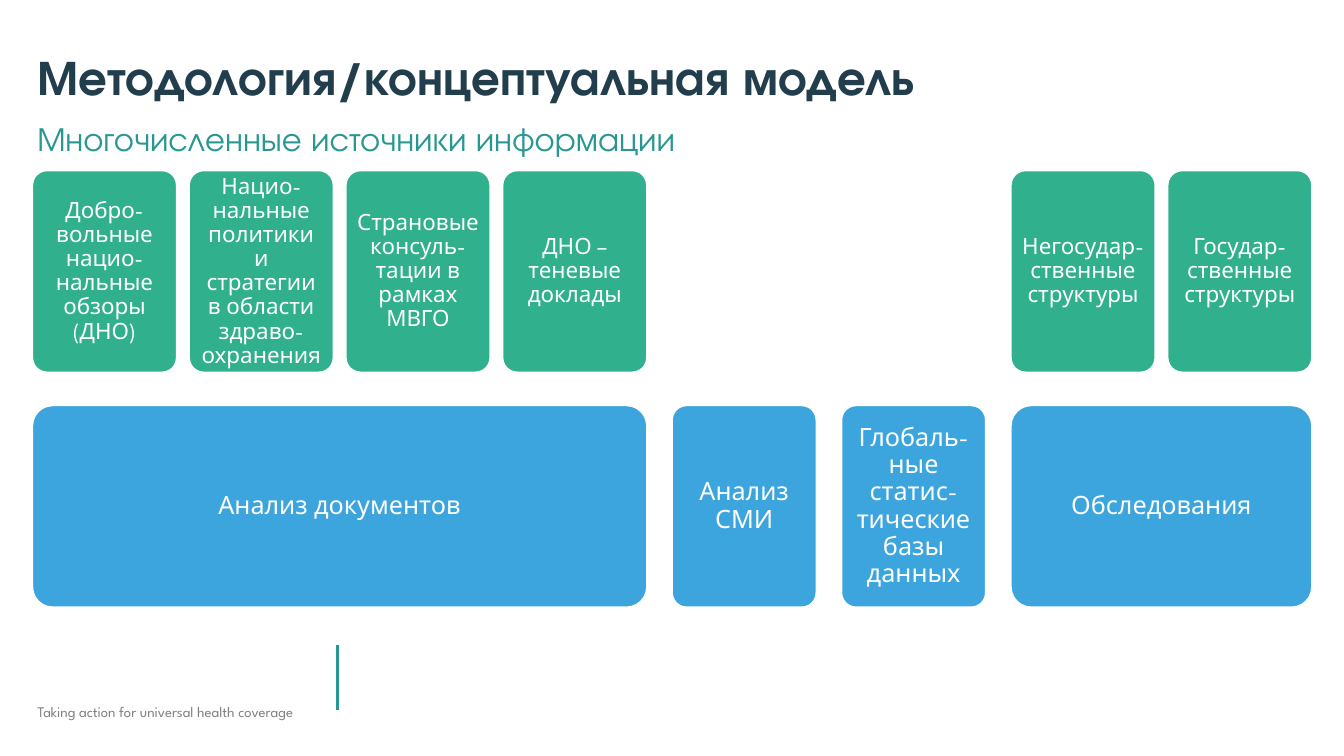
from dataclasses import dataclass

from lxml import etree
from pptx import Presentation
from pptx import util as u
from pptx.dml.color import RGBColor
from pptx.enum import shapes, text
from pptx.oxml.ns import qn


@dataclass(frozen=True)
class Theme:
    heading_font: str = "TeX Gyre Adventor"
    body_font: str = "League Spartan"
    navy: str = "223E4C"
    teal: str = "289791"
    grey: str = "808080"
    green: str = "30B08C"
    blue: str = "3CA5DD"
    white: str = "FFFFFF"
    title_size: float = 35
    subtitle_size: float = 24
    method_size: float = 18
    source_size: float = 16
    footer_size: float = 10.5


THEME = Theme()

# Each method of analysis with the sources that feed it
METHODS = [
    ("Анализ документов", [
        "Добро-вольные нацио-нальные обзоры (ДНО)",
        "Нацио-нальные политики и стратегии в области здраво-охранения",
        "Страновые консуль-тации в рамках МВГО",
        "ДНО – теневые доклады",
    ]),
    ("Анализ СМИ", []),
    ("Глобаль-ные статис-тические базы данных", []),
    ("Обследования", ["Негосудар-ственные структуры", "Государ-ственные структуры"]),
]

CARD_WIDTH, CARD_HEIGHT = 3.63, 5.08
CARD_GAP, METHOD_GAP, ROW_GAP = 0.32, 0.64, 0.84


def write(frame, words, font_name, size, color, bold=False):
    frame.word_wrap = True
    paragraph = frame.paragraphs[0]
    paragraph.line_spacing = 0.9
    run = paragraph.add_run()
    run.text = words
    run.font.name = font_name
    run.font.size = u.Pt(size)
    run.font.bold = bold
    run.font.color.rgb = RGBColor.from_string(color)
    return paragraph


def add_label(slide, box, words, *style, **options):
    """Place a text box; box is left, top, width, height in centimetres."""
    shape = slide.shapes.add_textbox(*map(u.Cm, box))
    return write(shape.text_frame, words, *style, **options)


def add_card(slide, box, words, color, size):
    left, top, width, height = box
    card = slide.shapes.add_shape(
        shapes.MSO_SHAPE.ROUNDED_RECTANGLE, *map(u.Cm, (left, top, width, height)))
    card.adjustments[0] = 0.1
    card.shadow.inherit = False
    card.fill.solid()
    card.fill.fore_color.rgb = RGBColor.from_string(color)
    card.line.color.rgb = RGBColor.from_string(THEME.white)
    card.line.width = u.Pt(1)
    frame = card.text_frame
    frame.margin_left = frame.margin_right = u.Cm(0.17)
    frame.margin_top = frame.margin_bottom = u.Cm(0.17)
    frame.vertical_anchor = text.MSO_ANCHOR.MIDDLE
    paragraph = write(frame, words, THEME.body_font, size, THEME.white)
    paragraph.alignment = text.PP_ALIGN.CENTER


def add_header(slide, left, top, width):
    add_label(slide, (left, top, width, 1.75), "Методология/концептуальная модель",
              THEME.heading_font, THEME.title_size, THEME.navy, bold=True)
    add_label(slide, (left, top + 1.75, width, 1.14), "Многочисленные источники информации",
              THEME.heading_font, THEME.subtitle_size, THEME.teal)


def add_method_map(slide, left, top):
    """Place source cards above the method card that spans them."""
    pitch = CARD_WIDTH + CARD_GAP
    method_top = top + CARD_HEIGHT + ROW_GAP
    for method, sources in METHODS:
        width = max(len(sources), 1) * pitch - CARD_GAP
        add_card(slide, (left, method_top, width, CARD_HEIGHT),
                 method, THEME.blue, THEME.method_size)
        for column, source in enumerate(sources):
            add_card(slide, (left + column * pitch, top, CARD_WIDTH, CARD_HEIGHT),
                     source, THEME.green, THEME.source_size)
        left += width + METHOD_GAP


def add_footer(slide, left, top, width):
    rule_x = u.Cm(left + 7.82)
    rule = slide.shapes.add_connector(
        shapes.MSO_CONNECTOR.STRAIGHT, rule_x, u.Cm(top - 1.32), rule_x, u.Cm(top + 0.3))
    rule.line.color.rgb = RGBColor.from_string(THEME.teal)
    rule.line.width = u.Pt(2.25)
    etree.SubElement(rule._element.spPr, qn("a:effectLst"))
    paragraph = add_label(slide, (left, top, width, 0.74),
                          "Taking action for universal health coverage",
                          THEME.body_font, THEME.footer_size, THEME.grey)
    paragraph.line_spacing = 1.0


def main():
    presentation = Presentation()
    presentation.slide_width = u.Cm(33.87)
    presentation.slide_height = u.Cm(19.05)
    slide = presentation.slides.add_slide(presentation.slide_layouts[6])
    add_footer(slide, 0.69, 17.58, 8.41)
    add_header(slide, 0.69, 1.22, 32.25)
    add_method_map(slide, 0.82, 4.3)
    presentation.save("out.pptx")


if __name__ == "__main__":
    main()
